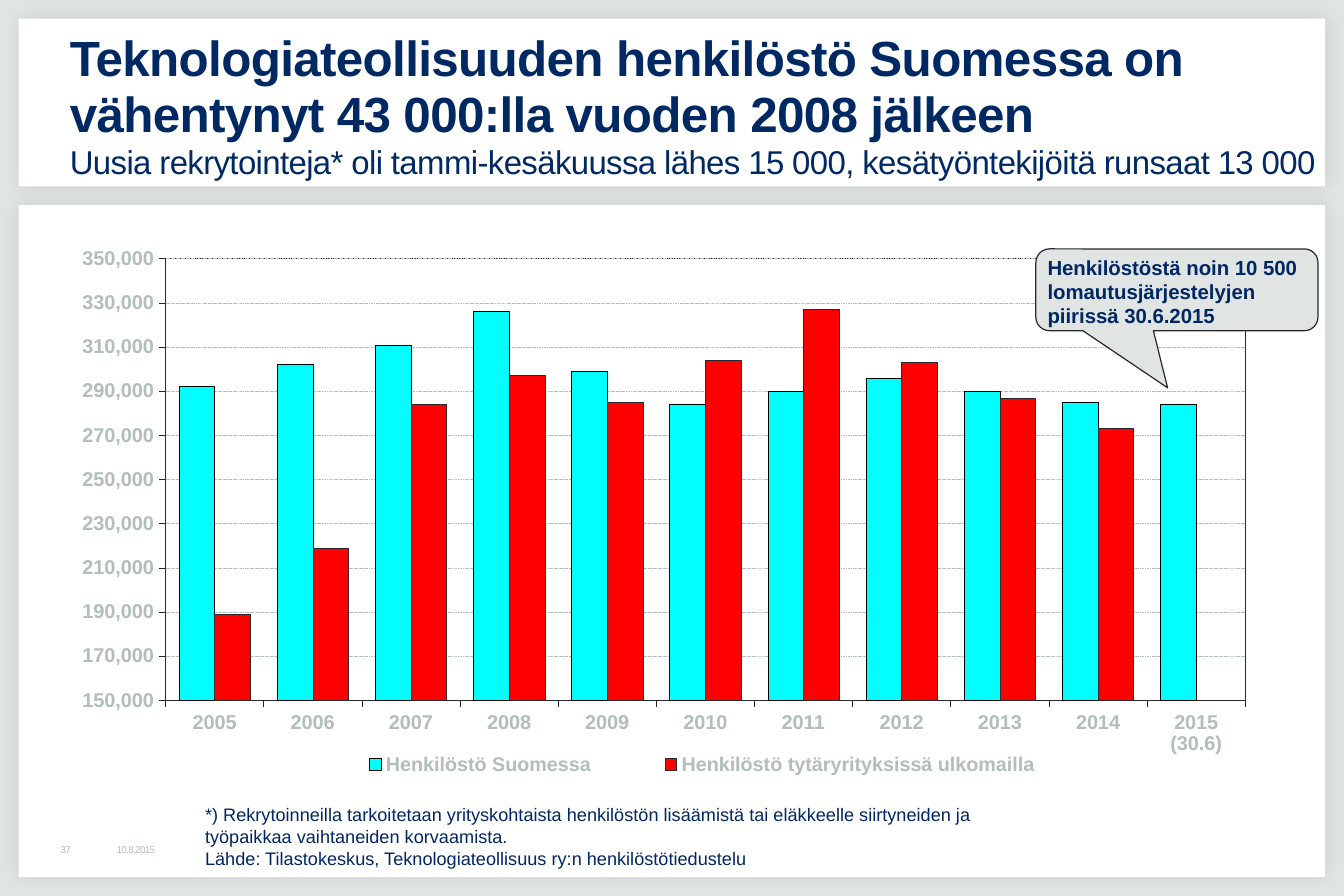
"""Builds the slide on technology industry personnel in Finland and abroad."""
from lxml import etree
from pptx import Presentation
from pptx.chart.data import CategoryChartData
from pptx.dml.color import RGBColor
from pptx.enum.chart import XL_CHART_TYPE as ChartType
from pptx.enum.chart import XL_LEGEND_POSITION as LegendPosition
from pptx.enum.chart import XL_TICK_MARK as TickMark
from pptx.enum.dml import MSO_LINE_DASH_STYLE as Dash
from pptx.enum.shapes import MSO_SHAPE as Shape
from pptx.enum.text import MSO_ANCHOR as Anchor
from pptx.enum.text import MSO_AUTO_SIZE as AutoSize
from pptx.enum.text import PP_ALIGN as Align
from pptx.oxml import parse_xml
from pptx.oxml.ns import nsdecls, qn
from pptx.util import Pt

MIST = RGBColor(0xE0, 0xE5, 0xE3)
WHITE = RGBColor(0xFF, 0xFF, 0xFF)
BLACK = RGBColor(0, 0, 0)
NAVY = RGBColor(0x00, 0x29, 0x64)
NOTE_NAVY = RGBColor(0x00, 0x26, 0x64)
GREY = RGBColor(0xB1, 0xBE, 0xB9)
INK = RGBColor(0x29, 0x28, 0x2E)
CYAN = RGBColor(0x00, 0xFF, 0xFF)
RED = RGBColor(0xFF, 0x00, 0x00)

YEARS = [str(year) for year in range(2005, 2015)] + ["2015 (30.6)"]
PERSONNEL = [
    ("Henkilöstö Suomessa", CYAN, BLACK,
     [292, 302, 311, 326, 299, 284, 290, 296, 290, 285, 284]),
    ("Henkilöstö tytäryrityksissä ulkomailla", RED, INK,
     [189, 219, 284, 297, 285, 304, 327, 303, 287, 273, None]),
]


def style_font(font, size, color, bold=False):
    font.name, font.size, font.bold = "Arial", Pt(size), bold
    font.color.rgb = color


def style_line(line, color, width):
    line.color.rgb = color
    line.width = Pt(width)


def tighten(paragraph):
    paragraph._p.pPr.find(qn("a:defRPr")).set("spc", "-40")


def set_insets(frame, left, top, right, bottom):
    frame.margin_left, frame.margin_top = Pt(left), Pt(top)
    frame.margin_right, frame.margin_bottom = Pt(right), Pt(bottom)


def add_panel(slide, top, height):
    panel = slide.shapes.add_shape(
        Shape.RECTANGLE, Pt(11.3), Pt(top), Pt(793.7), Pt(height))
    panel.fill.solid()
    panel.fill.fore_color.rgb = WHITE
    panel.line.fill.background()
    panel._element.spPr.append(parse_xml(
        f'<a:effectLst {nsdecls("a")}><a:outerShdw blurRad="{Pt(10)}" dist="0" '
        'dir="2700000" rotWithShape="0"><a:srgbClr val="000000">'
        '<a:alpha val="10000"/></a:srgbClr></a:outerShdw></a:effectLst>'))


def add_text(slide, box, lines, size, color, bold=False, insets=(7.2, 3.6, 7.2, 3.6)):
    frame = slide.shapes.add_textbox(*map(Pt, box)).text_frame
    frame.word_wrap = True
    set_insets(frame, *insets)
    frame.text = "\n".join(lines)
    for paragraph in frame.paragraphs:
        style_font(paragraph.font, size, color, bold)
    return frame


def add_footer(slide, left, width, text):
    frame = add_text(slide, (left, 510.2, width, 11.3), [text], 6, GREY,
                     insets=(2.8, 2.8, 2.8, 2.8))
    frame.vertical_anchor = Anchor.MIDDLE
    tighten(frame.paragraphs[0])


def fill_title(title, headline, subtitle):
    title.left, title.top, title.width, title.height = map(Pt, (39.6, 25.2, 766.8, 79.2))
    frame = title.text_frame
    frame.word_wrap = True
    frame.auto_size = AutoSize.NONE
    frame.vertical_anchor = Anchor.MIDDLE
    set_insets(frame, 2.8, 3.6, 7.2, 3.6)
    paragraph = frame.paragraphs[0]
    paragraph.alignment = Align.LEFT
    paragraph.line_spacing = 0.95
    style_font(paragraph.font, 30, NAVY, True)
    tighten(paragraph)
    paragraph.add_run().text = headline
    paragraph.add_line_break()
    detail = paragraph.add_run()
    detail.text = subtitle
    detail.font.size, detail.font.bold = Pt(20), False


def place(part, x, y, w, h, inner=False):
    for old in part.findall(qn("c:layout")):
        part.remove(old)
    layout = etree.Element(qn("c:layout"))
    manual = etree.SubElement(layout, qn("c:manualLayout"))
    settings = [("layoutTarget", "inner")] if inner else []
    settings += [("xMode", "edge"), ("yMode", "edge"), ("x", x), ("y", y), ("w", w), ("h", h)]
    for tag, value in settings:
        etree.SubElement(manual, qn(f"c:{tag}")).set("val", str(value))
    part.insert(0 if inner else 1, layout)


def style_axis(axis):
    axis.major_tick_mark = TickMark.OUTSIDE
    axis.minor_tick_mark = TickMark.NONE
    style_font(axis.tick_labels.font, 12.1, GREY, True)
    style_line(axis.format.line, INK, 0.25)


def add_personnel_chart(slide):
    data = CategoryChartData(number_format="#,##0")
    data.categories = YEARS
    for name, _, _, thousands in PERSONNEL:
        data.add_series(name, [n and n * 1000 for n in thousands])
    chart = slide.shapes.add_chart(
        ChartType.COLUMN_CLUSTERED, Pt(34), Pt(136), Pt(748), Pt(340.6), data).chart
    style_font(chart.font, 12.1, INK, True)
    chart.has_title = False

    plot = chart.plots[0]
    plot.gap_width, plot.overlap = 75, 0
    plot.vary_by_categories = False
    for series, (_, fill, outline, _) in zip(plot.series, PERSONNEL):
        series.format.fill.solid()
        series.format.fill.fore_color.rgb = fill
        style_line(series.format.line, outline, 0.25)

    style_axis(chart.category_axis)
    scale = chart.value_axis
    style_axis(scale)
    scale.minimum_scale, scale.maximum_scale, scale.major_unit = 150000, 350000, 20000
    scale.tick_labels.number_format = "#,##0"
    scale.tick_labels.number_format_is_linked = False
    grid = scale.major_gridlines.format.line
    style_line(grid, GREY, 0.25)
    grid.dash_style = Dash.SQUARE_DOT

    chart.has_legend = True
    legend = chart.legend
    legend.position = LegendPosition.BOTTOM
    legend.include_in_layout = False
    style_font(legend.font, 12, GREY, True)
    place(legend._element, 0.2, 0.94, 0.65, 0.05)

    plot_area = chart._chartSpace.chart.plotArea
    place(plot_area, 0.089, 0.062, 0.877, 0.788, inner=True)
    plot_area.append(parse_xml(
        f'<c:spPr {nsdecls("c", "a")}><a:noFill/><a:ln w="{Pt(0.25)}"><a:solidFill>'
        f'<a:srgbClr val="{INK}"/></a:solidFill></a:ln></c:spPr>'))


def add_callout(slide, lines):
    left, top = 629.3, 151.2
    bubble = slide.shapes.add_shape(
        Shape.ROUNDED_RECTANGULAR_CALLOUT, Pt(left), Pt(top), Pt(171.4), Pt(49.7))
    for index, value in enumerate((-0.033, 1.198, 0.167)):
        bubble.adjustments[index] = value
    bubble.shadow.inherit = False
    bubble.fill.solid()
    bubble.fill.fore_color.rgb = MIST
    style_line(bubble.line, INK, 0.75)
    add_text(slide, (left, top, 187.9, 52.6), lines, 12.4, NOTE_NAVY, True)


def main():
    deck = Presentation()
    deck.slide_width, deck.slide_height = Pt(816.5), Pt(544.3)
    slide = deck.slides.add_slide(deck.slide_layouts[5])
    slide.background.fill.solid()
    slide.background.fill.fore_color.rgb = MIST
    add_panel(slide, 11.3, 102)
    add_panel(slide, 124.7, 408.2)
    title = slide.shapes.title
    slide.shapes._spTree.append(title._element)
    fill_title(title,
               "Teknologiateollisuuden henkilöstö Suomessa on vähentynyt 43 000:lla vuoden 2008 jälkeen",
               "Uusia rekrytointeja* oli tammi-kesäkuussa lähes 15 000, kesätyöntekijöitä runsaat 13 000")
    add_footer(slide, 34, 34, "37")
    add_footer(slide, 68, 102, "10.8.2015")
    add_personnel_chart(slide)
    add_text(slide, (118.8, 485.3, 532.8, 46.1), [
        "*) Rekrytoinneilla tarkoitetaan yrityskohtaista henkilöstön lisäämistä tai eläkkeelle "
        "siirtyneiden ja työpaikkaa vaihtaneiden korvaamista.",
        "Lähde: Tilastokeskus, Teknologiateollisuus ry:n henkilöstötiedustelu",
    ], 11, NOTE_NAVY, insets=(5.8, 2.9, 5.8, 2.9))
    add_callout(slide, ["Henkilöstöstä noin 10 500", "lomautusjärjestelyjen",
                        "piirissä 30.6.2015"])
    deck.save("out.pptx")


if __name__ == "__main__":
    main()
